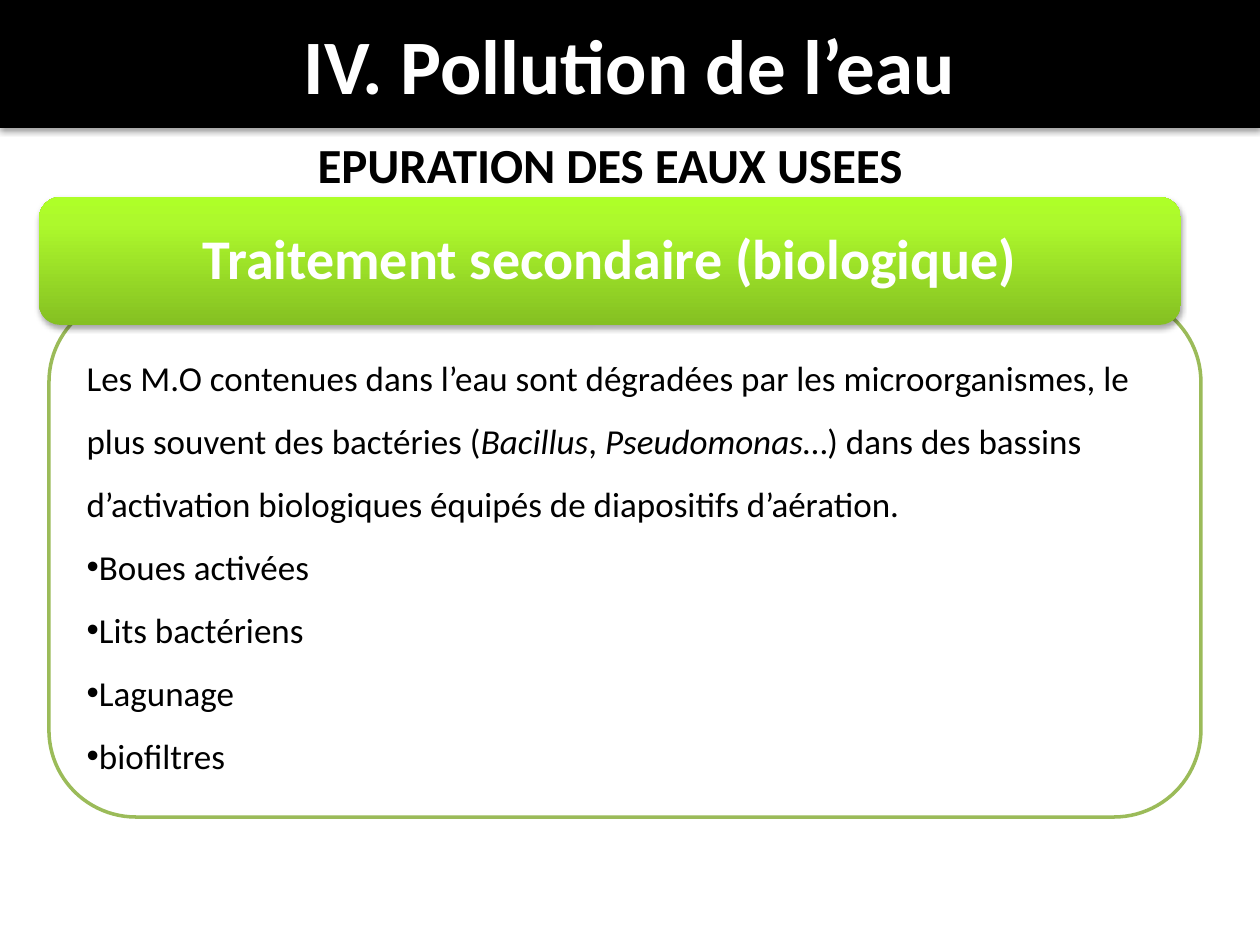
from lxml.etree import SubElement
from pptx import Presentation
from pptx.dml.color import RGBColor
from pptx.enum.shapes import MSO_SHAPE as Shape
from pptx.enum.text import MSO_ANCHOR as Anchor, MSO_AUTO_SIZE as AutoSize, PP_ALIGN as Align
from pptx.oxml.ns import qn
from pptx.util import Emu, Pt

PX = 914400 // 126

TITLE = "IV. Pollution de l’eau"
SUBTITLE = "EPURATION DES EAUX USEES"
HEADING = "Traitement secondaire (biologique)"
# Each paragraph is a list of (text, italic) runs; the first one has no bullet.
BODY = [
    [("Les M.O contenues dans l’eau sont dégradées par les microorganismes, "
      "le plus souvent des bactéries (", False),
     ("Bacillus", True), (", ", False), ("Pseudomonas", True),
     ("…) dans des bassins d’activation biologiques équipés de "
      "diapositifs d’aération.", False)],
    [("Boues activées", False)],
    [("Lits bactériens", False)],
    [("Lagunage", False)],
    [("biofiltres", False)],
]

BAND_BOX = (0, 0, 1260, 128)
SUBTITLE_BOX = (157, 128, 906, 72)
HEADING_BOX = (39, 197, 1142, 128)
PANEL_BOX = (49, 295, 1152, 522)
PANEL_INSET = 25  # room for the rounded corners
HEADING_STOPS = [(0, "85C022"), (80, "ADF92C"), (100, "AEFF28")]


def rgb(hex_color):
    return RGBColor.from_string(hex_color)


def emu(box):
    return [Emu(value * PX) for value in box]


def place(shape, box):
    shape.left, shape.top, shape.width, shape.height = emu(box)


def add_plain(slide, kind, box, fill=None):
    shape = slide.shapes.add_shape(kind, *emu(box))
    shape.shadow.inherit = False
    shape.line.fill.background()
    if fill:
        shape.fill.solid()
        shape.fill.fore_color.rgb = rgb(fill)
    return shape


def add_color(parent, hex_color):
    return SubElement(parent, qn("a:srgbClr"), val=hex_color)


def drop_shadow(shape):
    effects = shape.element.spPr.find(qn("a:effectLst"))
    outer = SubElement(effects, qn("a:outerShdw"), blurRad="40000", dist="23000",
                       dir="5400000", rotWithShape="0")
    SubElement(add_color(outer, "000000"), qn("a:alpha"), val="35000")


def gradient(shape, stops, angle):
    shape.fill.gradient()
    shape.fill.gradient_angle = angle
    stop_list = next(shape.element.spPr.iter(qn("a:gsLst")))
    stop_list.clear()
    for percent, color in stops:
        add_color(SubElement(stop_list, qn("a:gs"), pos=str(percent * 1000)), color)


def set_font(font, size, color, **more):
    for name, value in dict(name="Calibri", size=Pt(size), **more).items():
        setattr(font, name, value)
    font.color.rgb = rgb(color)


def set_frame(frame, anchor):
    for name, value in dict(word_wrap=True, auto_size=AutoSize.NONE,
                            vertical_anchor=anchor).items():
        setattr(frame, name, value)


def write_centred(shape, text, size, color, anchor=Anchor.MIDDLE):
    frame = shape.text_frame
    set_frame(frame, anchor)
    paragraph = frame.paragraphs[0]
    paragraph.alignment = Align.CENTER
    run = paragraph.add_run()
    run.text = text
    set_font(run.font, size, color, bold=True)
    return paragraph


def write_body(frame):
    set_frame(frame, Anchor.MIDDLE)
    for index, runs in enumerate(BODY):
        paragraph = frame.add_paragraph() if index else frame.paragraphs[0]
        properties = paragraph._p.get_or_add_pPr()
        properties.set("marL", "0")
        properties.set("indent", "0")
        if index == 0:
            SubElement(properties, qn("a:buNone"))
        for name, value in dict(line_spacing=1.5, space_before=Pt(0),
                                alignment=Align.LEFT).items():
            setattr(paragraph, name, value)
        for text, italic in runs:
            run = paragraph.add_run()
            run.text = text
            set_font(run.font, 20, "000000", italic=italic)


def main():
    deck = Presentation()
    deck.slide_width, deck.slide_height = emu((1260, 945))
    slide = deck.slides.add_slide(deck.slide_layouts[1])
    title, body = slide.placeholders

    panel = add_plain(slide, Shape.ROUNDED_RECTANGLE, PANEL_BOX, "FFFFFF")
    panel.line.color.rgb = rgb("9BBB59")
    panel.line.width = Pt(2)
    band = add_plain(slide, Shape.RECTANGLE, BAND_BOX, "000000")
    drop_shadow(band)
    for backdrop in (panel, band):
        title.element.addprevious(backdrop.element)

    place(title, BAND_BOX)
    write_centred(title, TITLE, 44, "FFFFFF")

    left, top, width, height = PANEL_BOX
    place(body, (left + PANEL_INSET, top + PANEL_INSET,
                 width - 2 * PANEL_INSET, height - 2 * PANEL_INSET))
    write_body(body.text_frame)

    subtitle = slide.shapes.add_textbox(*emu(SUBTITLE_BOX))
    write_centred(subtitle, SUBTITLE, 28, "000000", Anchor.TOP)

    heading = add_plain(slide, Shape.ROUNDED_RECTANGLE, HEADING_BOX)
    gradient(heading, HEADING_STOPS, 90)
    drop_shadow(heading)
    write_centred(heading, HEADING, 32, "FFFFFF").line_spacing = 0.9

    deck.save("out.pptx")


if __name__ == "__main__":
    main()
